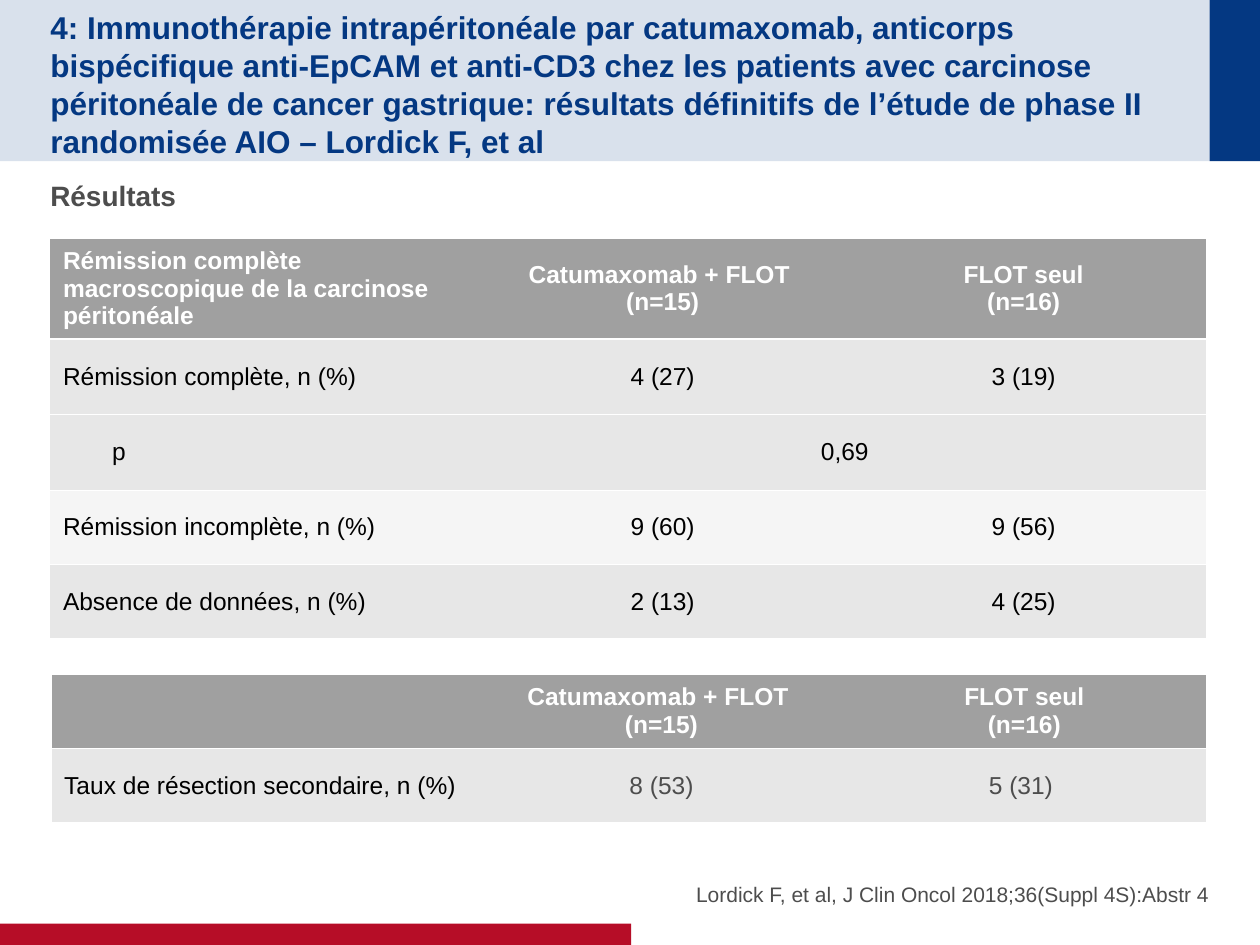
from pptx import Presentation
from pptx.dml.color import RGBColor
from pptx.enum.shapes import MSO_SHAPE
from pptx.enum.text import MSO_ANCHOR, PP_ALIGN
from pptx.oxml import parse_xml
from pptx.oxml.ns import nsdecls
from pptx.util import Inches, Pt

NAVY, RED, PALE_BLUE = "043882", "B60D27", "D9E1EC"
WHITE, BLACK, DARK_GREY = "FFFFFF", "000000", "4D4D4D"
GREY, LIGHT_GREY, PALE_GREY = "A0A0A0", "E7E7E7", "F5F5F5"
NO_GRID_STYLE = "{2D5ABB26-0587-4C30-8999-92F81FD0307C}"
ARMS = ["Catumaxomab + FLOT \n(n=15)", "FLOT seul\n(n=16)"]


def rgb(color):
    return RGBColor.from_string(color)


def write(tf, text, size, color, bold=False, align=PP_ALIGN.LEFT):
    p = tf.paragraphs[0]
    p.text = text
    p.alignment = align
    for r in p.runs:
        r.font.name = "Arial"
        r.font.size = Pt(size)
        r.font.bold = bold
        r.font.color.rgb = rgb(color)


def add_band(s, left, top, width, height, color):
    sp = s.shapes.add_shape(MSO_SHAPE.RECTANGLE, Inches(left), Inches(top),
                            Inches(width), Inches(height))
    sp.fill.solid()
    sp.fill.fore_color.rgb = rgb(color)
    sp.line.fill.background()
    sp.shadow.inherit = False


def add_text(s, left, top, width, height, text, size, color, bold=False,
             align=PP_ALIGN.LEFT, anchor=MSO_ANCHOR.TOP, inset=0):
    sp = s.shapes.add_textbox(Inches(left), Inches(top), Inches(width), Inches(height))
    tf = sp.text_frame
    tf.word_wrap = True
    tf.vertical_anchor = anchor
    tf.margin_left = tf.margin_right = tf.margin_bottom = 0
    tf.margin_top = Inches(inset)
    write(tf, text, size, color, bold, align)


def add_rule(cell, side):
    tc_pr = cell._tc.get_or_add_tcPr()
    tc_pr.insert(0, parse_xml(
        f'<a:{side} {nsdecls("a")} w="12700"><a:solidFill>'
        f'<a:srgbClr val="{WHITE}"/></a:solidFill></a:{side}>'))


def add_table(s, left, top, widths, heights, rows, fills, value_color, joined=()):
    frame = s.shapes.add_table(len(rows), len(widths), Inches(left), Inches(top),
                               Inches(sum(widths)), Inches(sum(heights)))
    table = frame.table
    table.first_row = table.horz_banding = False
    frame._element.find(".//{*}tableStyleId").text = NO_GRID_STYLE
    for column, width in zip(table.columns, widths):
        column.width = Inches(width)
    for i, (values, fill) in enumerate(zip(rows, fills)):
        table.rows[i].height = Inches(heights[i])
        for j, text in enumerate(values):
            cell = table.cell(i, j)
            cell.vertical_anchor = MSO_ANCHOR.MIDDLE
            cell.fill.solid()
            cell.fill.fore_color.rgb = rgb(fill)
            color = WHITE if i == 0 else value_color if j else BLACK
            write(cell.text_frame, text, 14, color, i == 0,
                  PP_ALIGN.CENTER if j else PP_ALIGN.LEFT)
            if i + 1 not in joined:
                add_rule(cell, "lnB")
            if i not in joined:
                add_rule(cell, "lnT")
    return table


def main():
    prs = Presentation()
    prs.slide_width, prs.slide_height = Inches(10), Inches(7.5)
    s = prs.slides.add_slide(prs.slide_layouts[6])

    add_band(s, 0, 0, 9.6, 1.28, PALE_BLUE)
    add_band(s, 9.6, 0, 0.4, 1.28, NAVY)
    add_band(s, 0, 7.33, 5.01, 0.17, RED)

    add_text(s, 0.4, 0.2, 9.01, 0.88,
             "4: Immunothérapie intrapéritonéale par catumaxomab, anticorps "
             "bispécifique anti-EpCAM et anti-CD3 chez les patients avec carcinose "
             "péritonéale de cancer gastrique: résultats définitifs de l’étude de "
             "phase II randomisée AIO – Lordick F, et al",
             18, NAVY, True, anchor=MSO_ANCHOR.MIDDLE, inset=0.05)
    add_text(s, 0.4, 1.37, 9.2, 0.4, "Résultats", 16, DARK_GREY, True, inset=0.05)
    add_text(s, 5.08, 6.67, 4.52, 0.53,
             "Lordick F, et al, J Clin Oncol 2018;36(Suppl 4S):Abstr 4",
             12, DARK_GREY, align=PP_ALIGN.RIGHT, anchor=MSO_ANCHOR.BOTTOM)

    remission = add_table(
        s, 0.4, 1.89, [3.44, 2.84, 2.89], [0.76, 0.6, 0.6, 0.59, 0.59],
        [["Rémission complète macroscopique de la carcinose péritonéale", *ARMS],
         ["Rémission complète, n (%)", "4 (27)", "3 (19)"],
         ["p", "0,69", ""],
         ["Rémission incomplète, n (%)", "9 (60)", "9 (56)"],
         ["Absence de données, n (%)", "2 (13)", "4 (25)"]],
        [GREY, LIGHT_GREY, LIGHT_GREY, PALE_GREY, LIGHT_GREY], BLACK, joined=(2,))
    remission.cell(2, 0).margin_left = Inches(0.49)
    remission.cell(2, 1).merge(remission.cell(2, 2))

    add_table(s, 0.41, 5.35, [3.4, 2.88, 2.88], [0.59, 0.59],
              [["", *ARMS],
               ["Taux de résection secondaire, n (%)", "8 (53)", "5 (31) "]],
              [GREY, LIGHT_GREY], DARK_GREY)

    prs.save("out.pptx")


if __name__ == "__main__":
    main()
